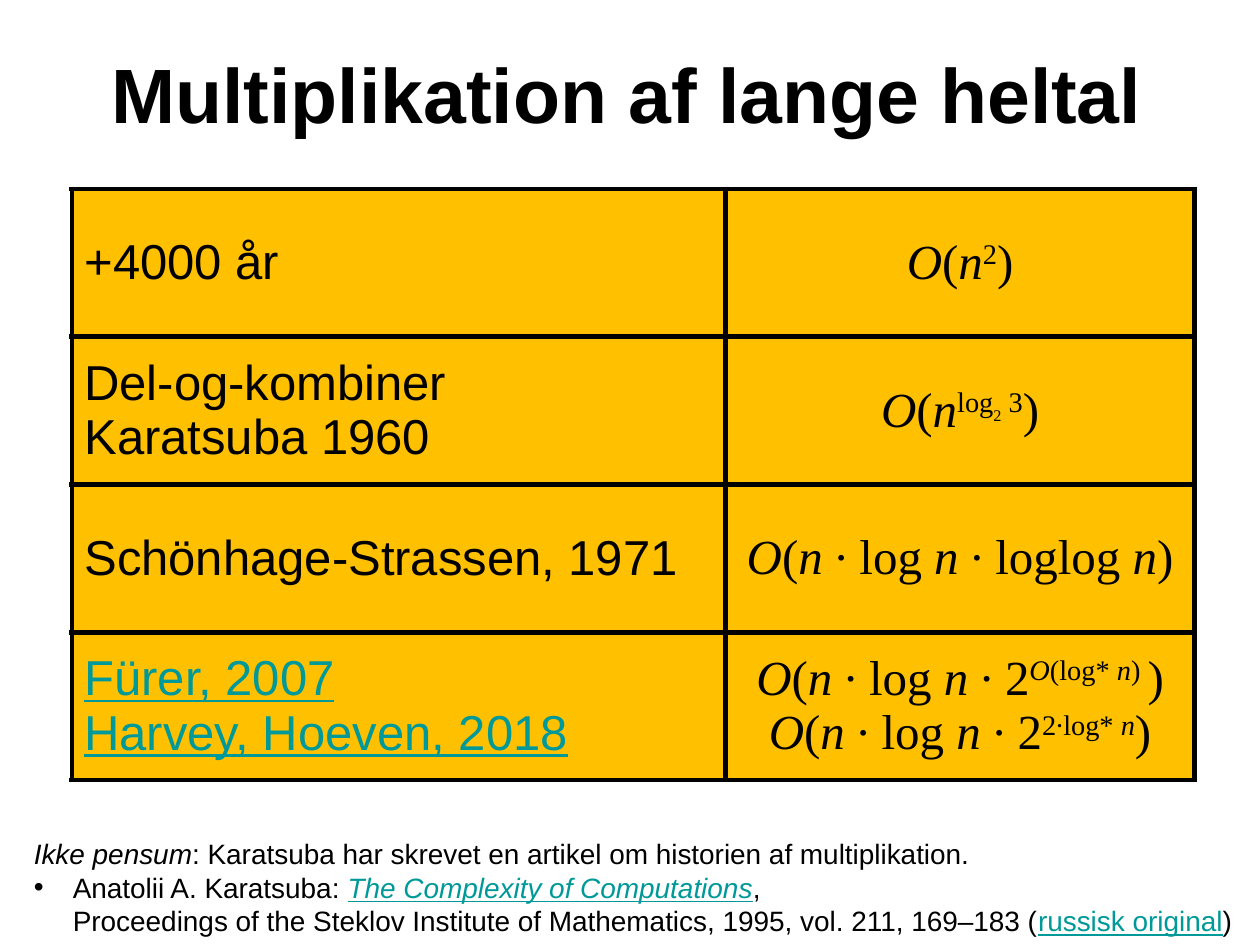
from lxml import etree
from pptx import Presentation
from pptx.dml.color import RGBColor
from pptx.enum import text as t
from pptx.oxml import ns
from pptx.util import Inches, Pt

COLORS = {"ink": "000000", "link": "009999", "cell": "FFC000"}
SANS, SERIF = "Arial", "Times New Roman"

STYLES = {
    "plain": {},
    "italic": {"italic": True},
    "link": {"link": True},
    "italic link": {"italic": True, "link": True},
    "power": {"raised": 30},
    "italic power": {"italic": True, "raised": 30},
    "log base": {"raised": 20, "size": 16},
}

HEADING = "Multiplikation af lange heltal"
O_OF_N = [("O", "italic"), ("(", "plain"), ("n", "italic")]
N_LOG_N = [("O", "italic"), ("(", "plain"), ("n ", "italic"),
           ("∙ log ", "plain"), ("n ", "italic")]
END = [(")", "plain")]

METHODS = [
    ([("+4000 år", "plain")],
     [O_OF_N + [("2", "power")] + END]),
    ([("Del-og-kombiner \nKaratsuba 1960", "plain")],
     [O_OF_N + [("log", "power"), ("2", "log base"), (" 3", "power")] + END]),
    ([("Schönhage-Strassen, 1971", "plain")],
     [N_LOG_N + [("∙ loglog ", "plain"), ("n", "italic")] + END]),
    ([("Fürer, 2007\nHarvey, Hoeven, 2018", "link")],
     [N_LOG_N + [("∙ 2", "plain"), ("O", "italic power"), ("(log* ", "power"),
                 ("n", "italic power"), (") ", "power")] + END,
      N_LOG_N + [("∙ 2", "plain"), ("2∙log* ", "power"),
                 ("n", "italic power")] + END]),
]

NOTE = [
    [("Ikke pensum", "italic"),
     (": Karatsuba har skrevet en artikel om historien af multiplikation.", "plain")],
    [("Anatolii A. Karatsuba: ", "plain"),
     ("The Complexity of Computations", "italic link"),
     (", \nProceedings of the Steklov Institute of Mathematics, 1995, "
      "vol. 211, 169–183 (", "plain"),
     ("russisk original", "link"), (")", "plain")],
]


def add_run(paragraph, words, face, size, italic=False, link=False, raised=0, bold=False):
    run = paragraph.add_run()
    run.text = words
    font = run.font
    font.name, font.size = face, Pt(size)
    font.bold, font.italic, font.underline = bold, italic, link
    font.color.rgb = RGBColor.from_string(COLORS["link" if link else "ink"])
    if raised:
        font._element.set("baseline", str(raised * 1000))


def write(frame, paragraphs, face, size, align=t.PP_ALIGN.LEFT, bold=False):
    for index, pieces in enumerate(paragraphs):
        paragraph = frame.add_paragraph() if index else frame.paragraphs[0]
        paragraph.alignment = align
        for words, style in pieces:
            look = {"size": size, "bold": bold, **STYLES[style]}
            for number, line in enumerate(words.split("\n")):
                if number:
                    paragraph.add_line_break()
                add_run(paragraph, line, face, **look)


def add_borders(cell, width):
    properties = cell._tc.get_or_add_tcPr()
    for index, side in enumerate(("lnL", "lnR", "lnT", "lnB")):
        line = etree.Element(ns.qn(f"a:{side}"), w=str(Pt(width)))
        fill = etree.SubElement(line, ns.qn("a:solidFill"))
        etree.SubElement(fill, ns.qn("a:srgbClr"), val=COLORS["ink"])
        properties.insert(index, line)


def add_bullet(paragraph, indent):
    properties = paragraph._p.get_or_add_pPr()
    properties.set("marL", str(Inches(indent)))
    properties.set("indent", str(-Inches(indent)))
    etree.SubElement(properties, ns.qn("a:buFont"), typeface=SANS)
    etree.SubElement(properties, ns.qn("a:buChar"), char="•")


def place(shape, left, top, width, height):
    shape.left, shape.top = Inches(left), Inches(top)
    shape.width, shape.height = Inches(width), Inches(height)


def main():
    deck = Presentation()
    deck.slide_width, deck.slide_height = Inches(10), Inches(7.5)
    slide = deck.slides.add_slide(deck.slide_layouts[5])

    heading = slide.shapes.title
    place(heading, 0.48, 0.11, 9, 1.25)
    heading.text_frame.vertical_anchor = t.MSO_ANCHOR.MIDDLE
    write(heading.text_frame, [[(HEADING, "plain")]], SANS, 44, t.PP_ALIGN.CENTER, True)

    methods = slide.shapes.add_table(
        len(METHODS), 2, Inches(0.57), Inches(1.5), Inches(8.91), Inches(4.69)).table
    methods.first_row = methods.horz_banding = False
    for column, width in zip(methods.columns, (5.19, 3.72)):
        column.width = Inches(width)
    for row, (method, bounds) in enumerate(METHODS):
        method_cell, bound_cell = methods.cell(row, 0), methods.cell(row, 1)
        write(method_cell.text_frame, [method], SANS, 28)
        write(bound_cell.text_frame, bounds, SERIF, 28, t.PP_ALIGN.CENTER)
        for cell in (method_cell, bound_cell):
            cell.vertical_anchor = t.MSO_ANCHOR.MIDDLE
            cell.fill.solid()
            cell.fill.fore_color.rgb = RGBColor.from_string(COLORS["cell"])
            add_borders(cell, 3)

    note = slide.shapes.add_textbox(
        Inches(0.17), Inches(6.59), Inches(9.83), Inches(0.91)).text_frame
    note.word_wrap = True
    note.auto_size = t.MSO_AUTO_SIZE.SHAPE_TO_FIT_TEXT
    write(note, NOTE, SANS, 16)
    add_bullet(note.paragraphs[1], 0.31)

    deck.save("out.pptx")


if __name__ == "__main__":
    main()
